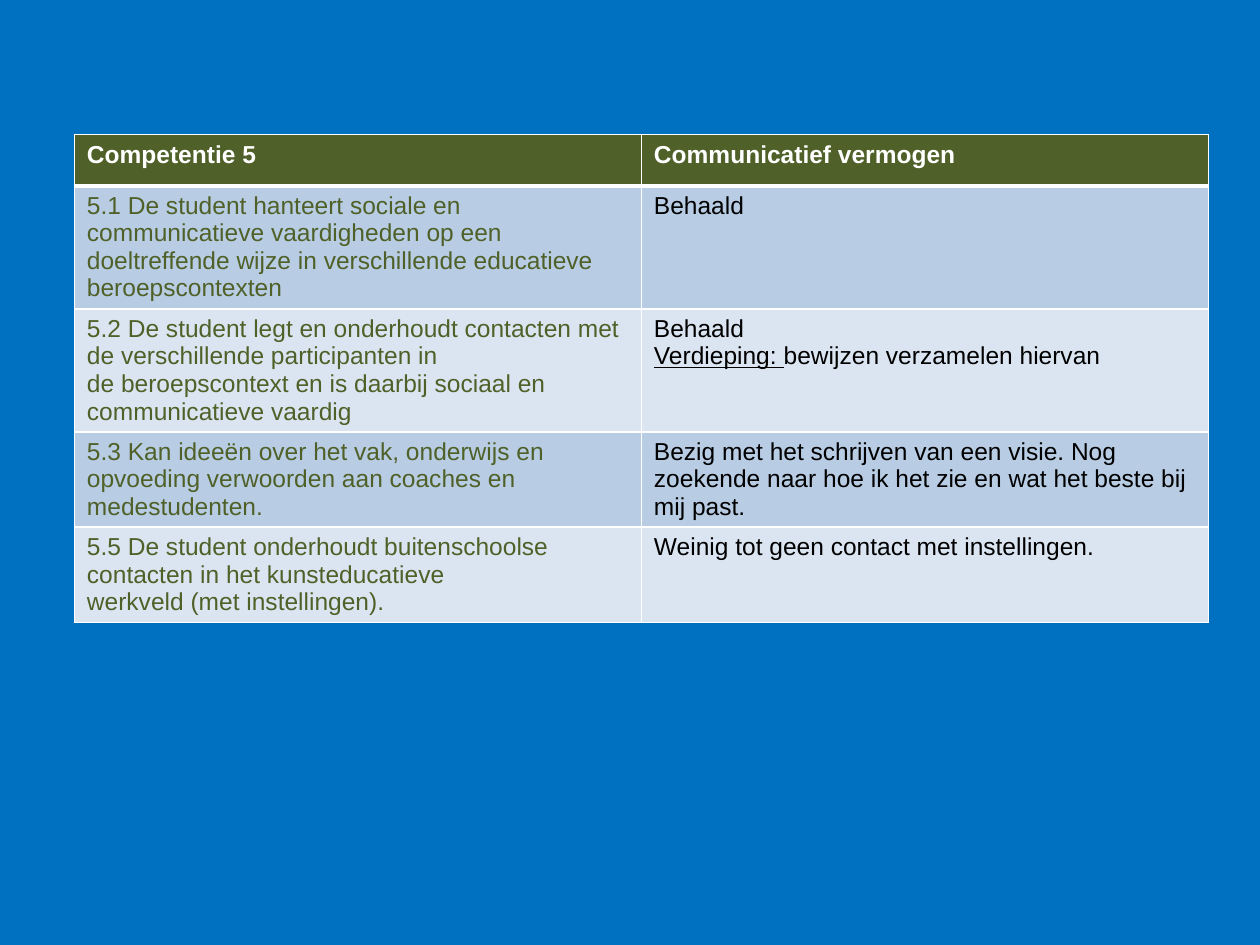
from dataclasses import dataclass

from lxml import etree
from pptx import Presentation
from pptx.dml.color import RGBColor
from pptx.oxml import ns
from pptx.util import Pt


@dataclass(frozen=True)
class Theme:
    font: str = "Arial"
    size: float = 14
    background: str = "0070C0"
    green: str = "4F6128"
    white: str = "FFFFFF"
    black: str = "000000"
    bands: tuple = ("B8CCE4", "DBE5F1")
    rule: float = 1
    header_rule: float = 3


class Deck:
    def __init__(self, theme, width, height):
        self.theme = theme
        self.prs = Presentation()
        self.prs.slide_width, self.prs.slide_height = Pt(width), Pt(height)
        self.s = None

    def slide(self):
        self.s = self.prs.slides.add_slide(self.prs.slide_layouts[6])
        fill = self.s.background.fill
        fill.solid()
        fill.fore_color.rgb = RGBColor.from_string(self.theme.background)

    def borders(self, cell, top, bottom):
        tc_pr = cell._tc.get_or_add_tcPr()
        rule = self.theme.rule
        for side, width in zip("LRTB", (rule, rule, top, bottom)):
            ln = etree.SubElement(tc_pr, ns.qn(f"a:ln{side}"), w=str(Pt(width)))
            fill = etree.SubElement(ln, ns.qn("a:solidFill"))
            etree.SubElement(fill, ns.qn("a:srgbClr"), val=self.theme.white)

    def text(self, tf, paragraphs, color, bold):
        """Each paragraph is a string, or an (underlined, plain) pair."""
        for i, content in enumerate(paragraphs):
            p = tf.paragraphs[0] if i == 0 else tf.add_paragraph()
            p.font.name, p.font.size = self.theme.font, Pt(self.theme.size)
            p.font.bold = bold
            p.font.color.rgb = RGBColor.from_string(color)
            if isinstance(content, str):
                p.add_run().text = content
            else:
                for part, underline in zip(content, (True, False)):
                    r = p.add_run()
                    r.text, r.font.underline = part, underline

    def table(self, left, top, col_width, heights, rows):
        t = self.theme
        columns = len(rows[0])
        frame = self.s.shapes.add_table(len(rows), columns, Pt(left), Pt(top),
                                        Pt(col_width * columns), Pt(sum(heights)))
        table = frame.table
        for row, height in zip(table.rows, heights):
            row.height = Pt(height)
        for i, row in enumerate(rows):
            header = i == 0
            for j, paragraphs in enumerate(row):
                cell = table.cell(i, j)
                self.borders(cell, t.header_rule if i == 1 else t.rule,
                             t.header_rule if header else t.rule)
                cell.fill.solid()
                fill = t.green if header else t.bands[(i - 1) % 2]
                cell.fill.fore_color.rgb = RGBColor.from_string(fill)
                color = t.white if header else (t.green, t.black)[j]
                self.text(cell.text_frame, paragraphs, color, header)

    def save(self):
        self.prs.save("out.pptx")


# Competence on the left, progress on the right
ROWS = [
    (["Competentie 5"], ["Communicatief vermogen"]),
    (["5.1 De student hanteert sociale en communicatieve vaardigheden op een",
      "doeltreffende wijze in verschillende educatieve beroepscontexten"],
     ["Behaald"]),
    (["5.2 De student legt en onderhoudt contacten met de verschillende participanten in",
      "de beroepscontext en is daarbij sociaal en communicatieve vaardig"],
     ["Behaald", ("Verdieping: ", "bewijzen verzamelen hiervan")]),
    (["5.3 Kan ideeën over het vak, onderwijs en opvoeding verwoorden aan coaches en",
      "medestudenten."],
     ["Bezig met het schrijven van een visie. Nog zoekende naar hoe ik het zie "
      "en wat het beste bij mij past."]),
    (["5.5 De student onderhoudt buitenschoolse contacten in het kunsteducatieve",
      "werkveld (met instellingen)."],
     ["Weinig tot geen contact met instellingen."]),
]


def main():
    deck = Deck(Theme(), 720, 540)
    deck.slide()
    # Competence table
    deck.table(42.5, 77, 324, (29.2, 70.3, 70.3, 54.3, 54.3), ROWS)
    deck.save()


if __name__ == "__main__":
    main()
